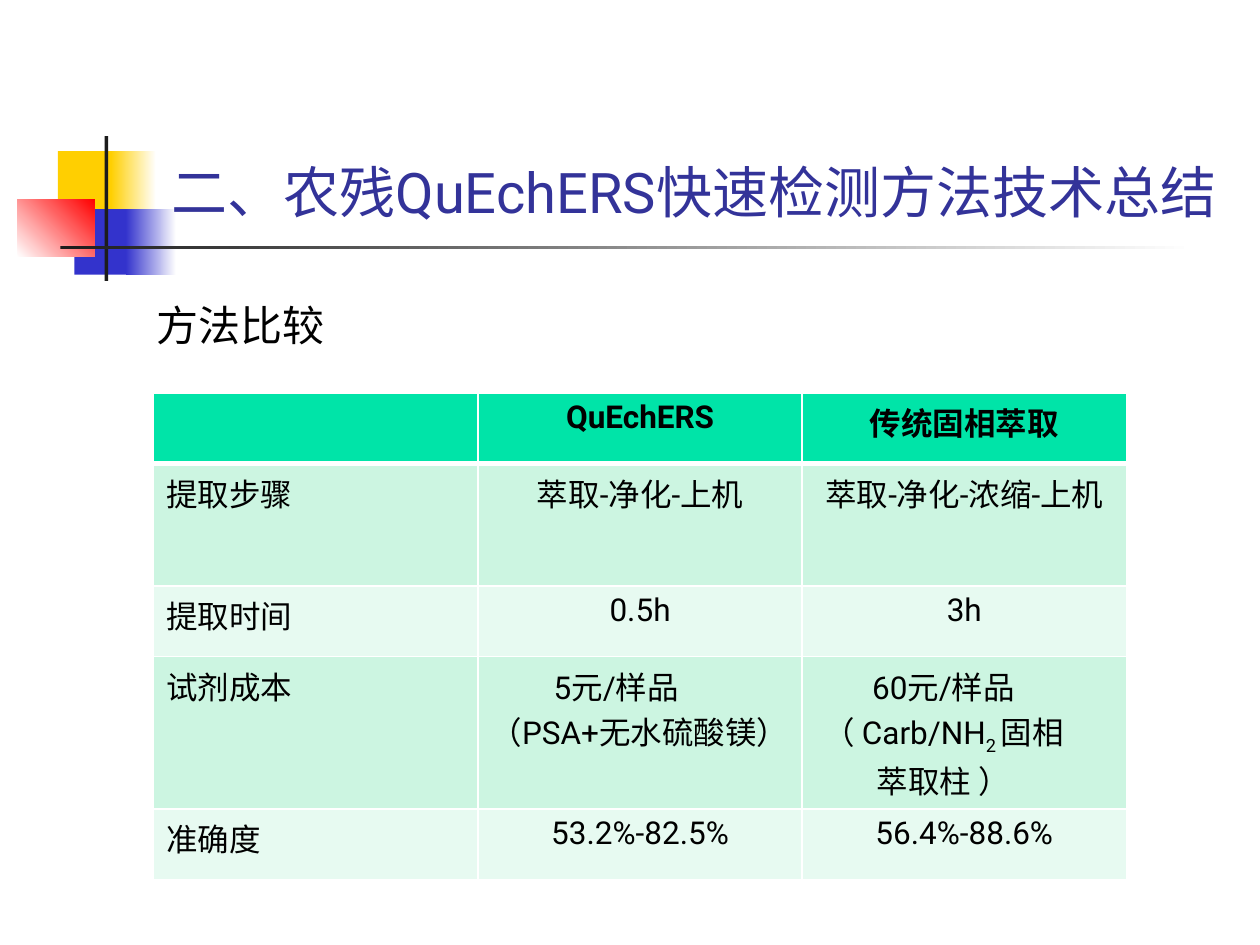
import pptx
import pptx.dml.color
import pptx.enum.dml
import pptx.enum.shapes
import pptx.enum.text
import pptx.oxml
import pptx.oxml.ns
import pptx.util

RGBColor = pptx.dml.color.RGBColor
Align = pptx.enum.text.PP_ALIGN
Inches = pptx.util.Inches

WHITE = RGBColor(0xFF, 0xFF, 0xFF)
BLACK = RGBColor(0x00, 0x00, 0x00)
CHARCOAL = RGBColor(0x1C, 0x1C, 0x1C)
YELLOW = RGBColor(0xFF, 0xCF, 0x01)
BLUE = RGBColor(0x33, 0x33, 0xCC)
RED = RGBColor(0xFF, 0x00, 0x00)
TITLE_BLUE = RGBColor(0x33, 0x33, 0x99)
HEADER_GREEN = RGBColor(0x00, 0xE4, 0xA8)
BAND_GREENS = (RGBColor(0xE7, 0xFA, 0xF1), RGBColor(0xCC, 0xF5, 0xE1))

FONT = "Roboto"
GRID = 0.02  # inches per grid step of the ornament

# Column, row, columns wide, rows high, colours from start to end, angle
ORNAMENT = [
    (16, 6, 24, 26, (YELLOW,), 0),
    (37, 6, 18, 26, (YELLOW, WHITE), 0),
    (22.5, 29, 23, 26, (BLUE,), 0),
    (43, 29, 20, 26, (BLUE, WHITE), 0),
    (0, 25, 30.5, 23, (WHITE, RED), 45),
    (34.5, 0, 1.5, 57.5, (CHARCOAL,), 0),
    (17, 43.5, 450, 1.5, (CHARCOAL, WHITE), 0),
]

# Each cell is a list of paragraphs
ROWS = [
    ([], ["QuEchERS"], ["传统固相萃取"]),
    (["提取步骤"], ["萃取-净化-上机"], ["萃取-净化-浓缩-上机"]),
    (["提取时间"], ["0.5h"], ["3h"]),
    (["试剂成本"], ["5元/样品", "（PSA+无水硫酸镁）"],
     ["60元/样品", "（ Carb/NH2 固相萃取柱 ）"]),
    (["准确度"], ["53.2%-82.5%"], ["56.4%-88.6%"]),
]
ROW_HEIGHTS = (0.56, 0.97, 0.56, 0.56, 0.56)
SUBSCRIPT = "2 "
COST_ROW = 3


def apply_format(target, values):
    for name, value in values.items():
        setattr(target, name, value)


def place(shape, box):
    names = ("left", "top", "width", "height")
    apply_format(shape, dict(zip(names, map(Inches, box))))


def add_run(paragraph, text, size, color, bold=False):
    run = paragraph.add_run()
    run.text = text
    apply_format(run.font, {"name": FONT, "size": pptx.util.Pt(size), "bold": bold})
    run.font.color.rgb = color
    return run


def add_ornament(slide, left, top):
    """Overlapping squares and fading rules on a grid starting at left, top."""
    for column, row, columns, rows, colors, angle in ORNAMENT:
        shape = slide.shapes.add_shape(
            pptx.enum.shapes.MSO_SHAPE.RECTANGLE,
            Inches(left + column * GRID), Inches(top + row * GRID),
            Inches(columns * GRID), Inches(rows * GRID))
        shape.shadow.inherit = False
        shape.line.fill.background()
        if len(colors) == 1:
            shape.fill.solid()
            shape.fill.fore_color.rgb = colors[0]
        else:
            shape.fill.gradient()
            shape.fill.gradient_angle = angle
            for stop, color in zip(shape.fill.gradient_stops, colors):
                stop.color.rgb = color


def add_title(slide, box, text):
    title = slide.shapes.title
    place(title, box)
    apply_format(title.text_frame, {
        "word_wrap": True,
        "auto_size": pptx.enum.text.MSO_AUTO_SIZE.NONE,
        "vertical_anchor": pptx.enum.text.MSO_ANCHOR.BOTTOM,
    })
    paragraph = title.text_frame.paragraphs[0]
    paragraph.alignment = Align.LEFT
    add_run(paragraph, text, 32, TITLE_BLUE)
    # The title stands in front of the ornament
    slide.shapes._spTree.append(title._element)


def add_subtitle(slide, box, text):
    subtitle = slide.shapes.add_textbox(*map(Inches, box))
    apply_format(subtitle.text_frame, {
        "word_wrap": False,
        "auto_size": pptx.enum.text.MSO_AUTO_SIZE.SHAPE_TO_FIT_TEXT,
    })
    add_run(subtitle.text_frame.paragraphs[0], text, 24, BLACK)


def set_borders(cell, row):
    """White rules, with a heavier one beneath the header."""
    properties = cell._tc.get_or_add_tcPr()
    for side in "LRTB":
        heavy = (row, side) in ((0, "B"), (1, "T"))
        properties.append(pptx.oxml.parse_xml(
            f'<a:ln{side} {pptx.oxml.ns.nsdecls("a")} w="{38100 if heavy else 12700}">'
            f'<a:solidFill><a:srgbClr val="{WHITE}"/></a:solidFill></a:ln{side}>'))


def fill_cell(cell, row, column, lines):
    set_borders(cell, row)
    cell.fill.solid()
    cell.fill.fore_color.rgb = BAND_GREENS[row % 2] if row else HEADER_GREEN
    left_aligned = column == 0 or (row, column) == (COST_ROW, 1)
    frame = cell.text_frame
    for index, line in enumerate(lines):
        paragraph = frame.add_paragraph() if index else frame.paragraphs[0]
        paragraph.alignment = Align.LEFT if left_aligned else Align.CENTER
        before, subscript, after = line.partition(SUBSCRIPT)
        for text in filter(None, (before, subscript, after)):
            run = add_run(paragraph, text, 18, BLACK, bold=row == 0)
            if text == SUBSCRIPT:
                run.font._element.set("baseline", "-25000")
    # Prices are shifted by paragraph margins
    if row == COST_ROW and column:
        name, margin = ("marL", 0.5) if column == 1 else ("marR", 0.33)
        price = frame.paragraphs[0]._p.get_or_add_pPr()
        price.set(name, str(Inches(margin)))


def add_comparison(slide, box):
    frame = slide.shapes.add_table(len(ROWS), len(ROWS[0]), *map(Inches, box))
    table = frame.table
    for column in table.columns:
        column.width = Inches(box[2] / len(ROWS[0]))
    for row, height in zip(table.rows, ROW_HEIGHTS):
        row.height = Inches(height)
    for row, cells in enumerate(ROWS):
        for column, lines in enumerate(cells):
            fill_cell(table.cell(row, column), row, column, lines)


def main():
    presentation = pptx.Presentation()
    apply_format(presentation, {"slide_width": Inches(10), "slide_height": Inches(7.5)})
    slide = presentation.slides.add_slide(presentation.slide_layouts.get_by_name("Title Only"))
    add_ornament(slide, 0.14, 1.08)
    add_title(slide, (1.26, 0.23, 8.52, 1.6), "二、农残QuEchERS快速检测方法技术总结")
    add_comparison(slide, (1.22, 3.12, 7.72, sum(ROW_HEIGHTS)))
    add_subtitle(slide, (1.14, 2.33, 1.55, 0.5), "方法比较")
    presentation.save("out.pptx")


if __name__ == "__main__":
    main()
